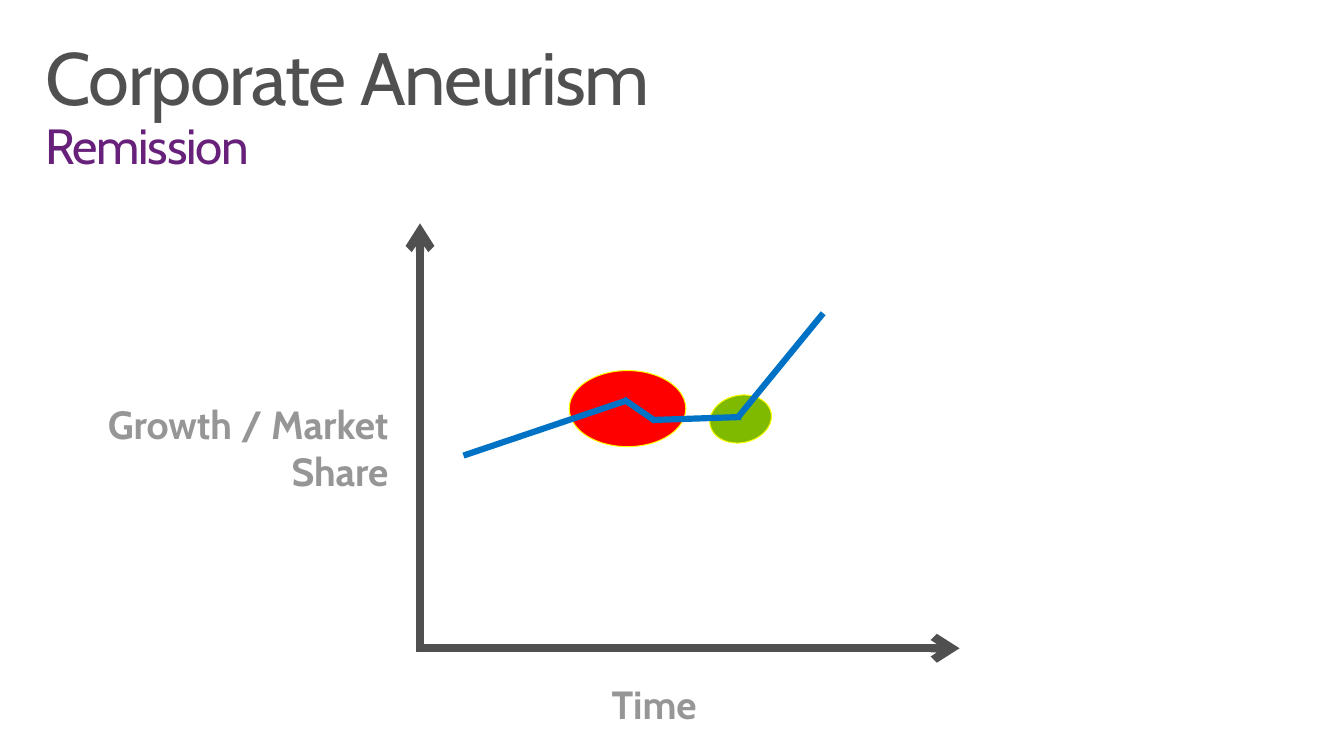
from pptx import Presentation
from pptx.dml.color import RGBColor
from pptx.enum.shapes import MSO_CONNECTOR, MSO_SHAPE
from pptx.enum.text import MSO_ANCHOR, PP_ALIGN
from pptx.oxml.ns import qn
from pptx.util import Inches, Pt
from lxml import etree

LINE, OVAL = MSO_CONNECTOR.STRAIGHT, MSO_SHAPE.OVAL
TOP, LEFT, RIGHT, MID = MSO_ANCHOR.TOP, PP_ALIGN.LEFT, PP_ALIGN.RIGHT, PP_ALIGN.CENTER
COLORS = {"dark": "505050", "purple": "68217A", "gray": "969696", "red": "FF0000",
          "green": "7FBA00", "yellow": "FFFF00", "blue": "0072C6"}


def color(name):
    return RGBColor.from_string(COLORS[name])


def write(para, text, size, tone, bold=False, align=LEFT, track=0):
    para.alignment = align
    run = para.add_run()
    run.text = text
    font = run.font
    font.name, font.size, font.bold = "Cabin", Pt(size), bold
    font.color.rgb = color(tone)
    if track:
        run._r.get_or_add_rPr().set("spc", str(track))


deck = Presentation()
deck.slide_width, deck.slide_height = Inches(13.6), Inches(7.65)
slide = deck.slides.add_slide(deck.slide_layouts[5])
shapes = slide.shapes

# Title and subtitle
title = shapes.title
title.left, title.top, title.width, title.height = map(Inches, (0.3, 0.32, 13, 1))
frame = title.text_frame
frame.word_wrap, frame.vertical_anchor = True, TOP
frame.margin_left = frame.margin_right = Inches(0.16)
frame.margin_top = frame.margin_bottom = Inches(0.1)
head = frame.paragraphs[0]
head.line_spacing = 0.9
write(head, "Corporate Aneurism", 54, "dark", track=-100)
head.add_line_break()
write(head, "Remission", 36, "purple", track=-100)

# Ovals marking the decline and the recovery
for x, y, wide, high, turn, tone in [(7.18, 4, 0.63, 0.48, 348, "green"),
                                     (5.76, 3.75, 1.18, 0.77, 0, "red")]:
    oval = shapes.add_shape(OVAL, *map(Inches, (x, y, wide, high)))
    oval.rotation = turn
    oval.shadow.inherit = False
    oval.fill.solid()
    oval.fill.fore_color.rgb = color(tone)
    oval.line.color.rgb = color("yellow")
    oval.line.width = Pt(0.75)

# Axes with arrowheads, then the growth curve
axes = [(4.25, 6.6, 4.25, 2.26), (4.23, 6.56, 9.71, 6.56)]
curve = [(4.69, 4.61, 6.35, 4.05), (6.63, 4.26, 6.31, 4.04),
         (6.6, 4.25, 7.5, 4.22), (7.47, 4.22, 8.33, 3.17)]
for ends, tone, width, arrow in [(axes, "dark", 6, True), (curve, "blue", 4.5, False)]:
    for points in ends:
        line = shapes.add_connector(LINE, *map(Inches, points))
        line.line.color.rgb = color(tone)
        line.line.width = Pt(width)
        if arrow:
            etree.SubElement(line.line._get_or_add_ln(), qn("a:tailEnd"), type="arrow")
        etree.SubElement(line._element.spPr, qn("a:effectLst"))

# Axis labels
for text, x, y, wide, high, align in [
        ("Growth / Market Share", 0.82, 4.05, 3.11, 0.96, RIGHT),
        ("Time", 4.71, 6.88, 3.82, 0.49, MID)]:
    frame = shapes.add_textbox(*map(Inches, (x, y, wide, high))).text_frame
    frame.word_wrap = True
    frame.margin_left = frame.margin_right = frame.margin_top = frame.margin_bottom = 0
    write(frame.paragraphs[0], text, 28.6, "gray", bold=True, align=align)

deck.save("out.pptx")
